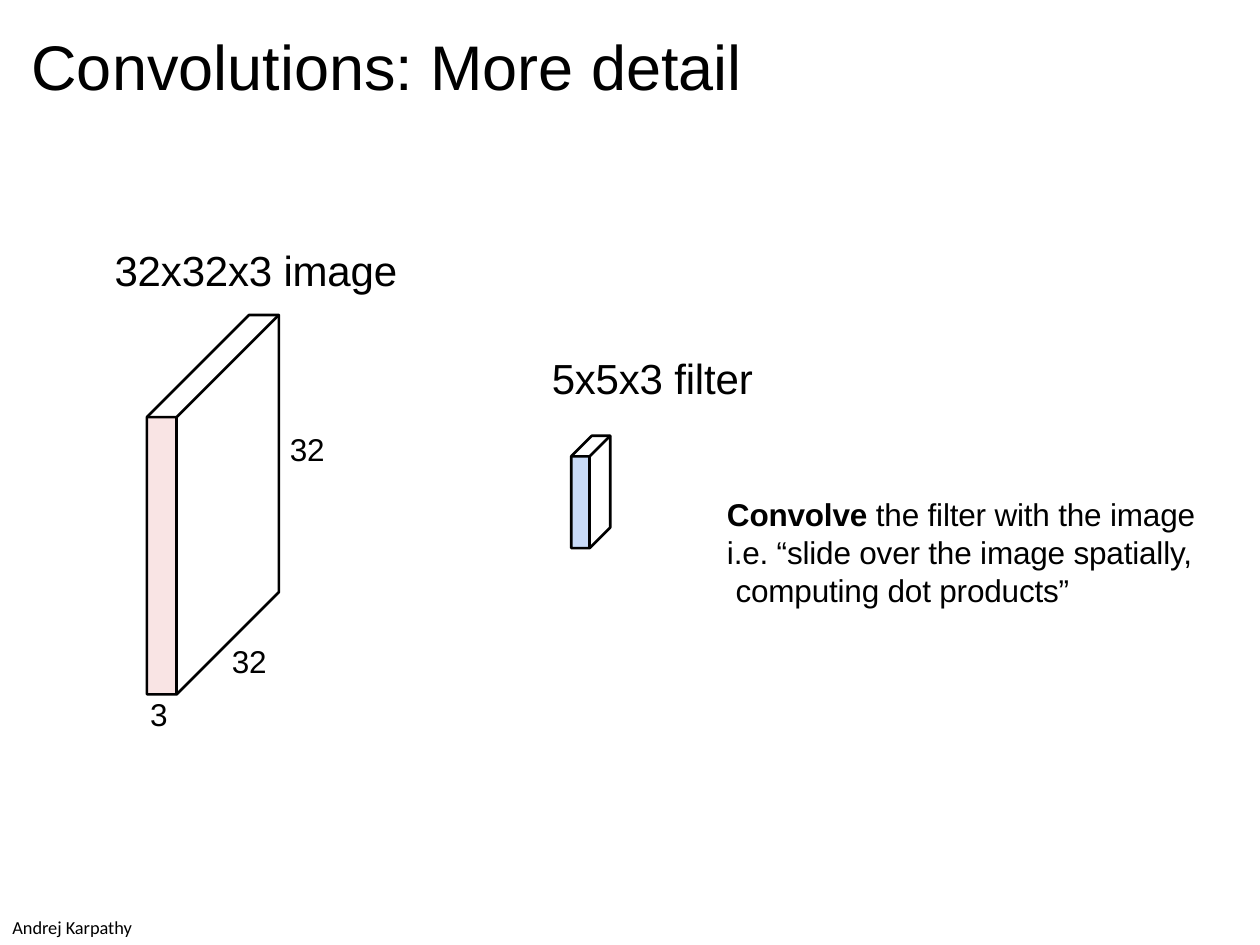
from lxml.etree import SubElement
from pptx import Presentation
from pptx.dml.color import RGBColor
from pptx.enum.shapes import MSO_CONNECTOR
from pptx.enum.text import MSO_ANCHOR, PP_ALIGN
from pptx.oxml.ns import qn
from pptx.util import Pt

BLACK = RGBColor(0x00, 0x00, 0x00)
PINK = RGBColor(0xF4, 0xCC, 0xCC)
BLUE = RGBColor(0xC8, 0xDA, 0xF7)
LINE_WIDTH = 1.5

TITLE = "Convolutions: More detail"
CREDIT = "Andrej Karpathy"

# Front face left, top, width, height; skew of the side; fill; opacity in percent
VOLUMES = [
    (84, 238.4, 17, 158.4, 58.4, PINK, 52),
    (326.4, 260.8, 10.5, 52.4, 11.8, BLUE, 100),
]

# Left, top, width, height, size, paragraphs of (text, bold) runs
LABELS = [
    (131.8, 367, 22.5, 22, 18, [[("32", False)]]),
    (164.9, 245.5, 22.5, 22, 18, [[("32", False)]]),
    (85, 397.4, 12.5, 22, 18, [[("3", False)]]),
    (314.6, 201.6, 120, 29, 24, [[("5x5x3 filter", False)]]),
    (64.8, 139.7, 168, 29, 24, [[("32x32x3 image", False)]]),
    (414.7, 283, 278, 66, 18, [
        [("Convolve ", True), ("the filter with the image", False)],
        [("i.e. “slide over the image spatially,\v computing dot products”", False)],
    ]),
]


def add_outline(s, points, close=False):
    start, *rest = [(Pt(x), Pt(y)) for x, y in points]
    builder = s.shapes.build_freeform(*start)
    builder.add_line_segments(rest, close=close)
    sp = builder.convert_to_shape()
    sp.shadow.inherit = False
    sp.fill.background()
    sp.line.color.rgb = BLACK
    sp.line.width = Pt(LINE_WIDTH)
    return sp


def add_volume(s, left, top, width, height, skew, color, opacity):
    """Draw a slanted box: tinted front face, silhouette and inner edges."""
    right, bottom = left + width, top + height
    front = [(left, top), (right, top), (right, bottom), (left, bottom)]
    face = add_outline(s, front, close=True)
    face.line.fill.background()
    face.fill.solid()
    face.fill.fore_color.rgb = color
    if opacity < 100:
        rgb = face.element.spPr.find(qn("a:solidFill"))[0]
        SubElement(rgb, qn("a:alpha")).set("val", str(opacity * 1000))

    back_right = (right + skew, top - skew)
    add_outline(s, [(left, top), (left + skew, top - skew), back_right,
                    (right + skew, bottom - skew), (right, bottom),
                    (left, bottom)], close=True)
    add_outline(s, [(left, top), (right, top), back_right])

    edge = s.shapes.add_connector(MSO_CONNECTOR.STRAIGHT, Pt(right), Pt(top),
                                  Pt(right), Pt(bottom))
    edge.line.color.rgb = BLACK
    edge.line.width = Pt(LINE_WIDTH)
    SubElement(edge.element.spPr, qn("a:effectLst"))


def place(sp, left, top, width, height):
    sp.left, sp.top, sp.width, sp.height = map(Pt, (left, top, width, height))


def clear_margins(tf):
    tf.margin_left = tf.margin_right = tf.margin_top = tf.margin_bottom = 0


def add_run(p, text, size, font="Arial", bold=False):
    r = p.add_run()
    r.text = text
    r.font.name = font
    r.font.size = Pt(size)
    r.font.bold = bold
    r.font.color.rgb = BLACK
    return r


def add_label(s, left, top, width, height, size, paragraphs):
    tf = s.shapes.add_textbox(Pt(left), Pt(top), Pt(width), Pt(height)).text_frame
    tf.word_wrap = True
    clear_margins(tf)
    for i, runs in enumerate(paragraphs):
        p = tf.add_paragraph() if i else tf.paragraphs[0]
        p._p.get_or_add_pPr().set("marL", str(Pt(0.7)))
        for text, bold in runs:
            for j, line in enumerate(text.split("\v")):
                if j:
                    p.add_line_break()
                r = add_run(p, line, size, bold=bold)
                r.font._element.set("spc", "-10")


def main():
    prs = Presentation()
    prs.slide_width, prs.slide_height = Pt(720), Pt(540)
    s = prs.slides.add_slide(prs.slide_layouts[5])

    title = s.shapes.title
    place(title, 18, 16, 684, 44)
    tf = title.text_frame
    clear_margins(tf)
    tf.vertical_anchor = MSO_ANCHOR.TOP
    tf.paragraphs[0].alignment = PP_ALIGN.LEFT
    add_run(tf.paragraphs[0], TITLE, 36)

    for volume in VOLUMES:
        add_volume(s, *volume)
    for label in LABELS:
        add_label(s, *label)

    credit = s.shapes.add_textbox(Pt(0), Pt(520), Pt(84), Pt(20)).text_frame
    credit.word_wrap = False
    add_run(credit.paragraphs[0], CREDIT, 10.5, "Calibri")

    prs.save("out.pptx")


if __name__ == "__main__":
    main()
